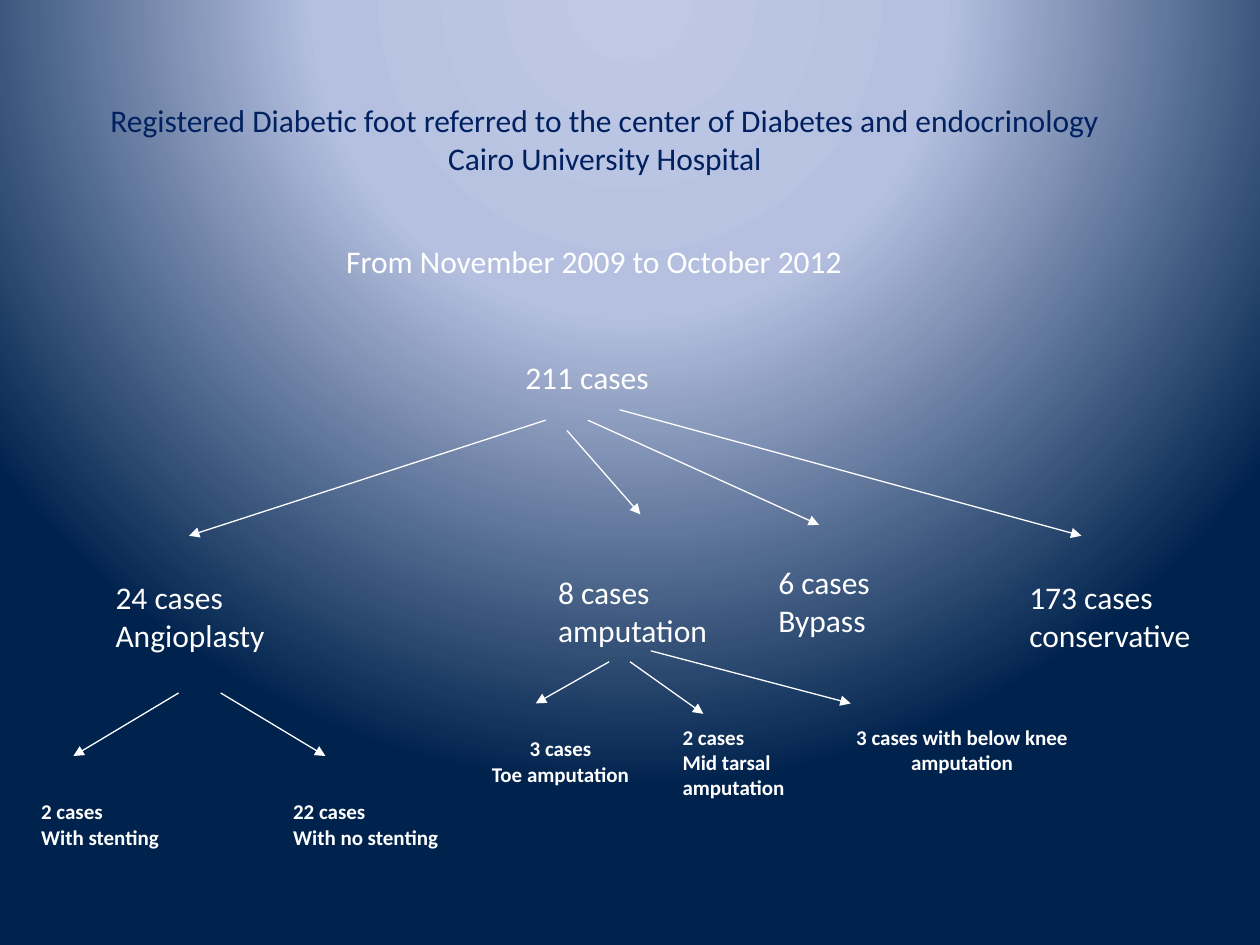
from lxml import etree
from pptx import Presentation
from pptx import util as u
from pptx.dml.color import RGBColor
from pptx.enum import shapes, text
from pptx.oxml import parse_xml
from pptx.oxml.ns import nsdecls, qn

WHITE = RGBColor(0xFF, 0xFF, 0xFF)
NAVY = RGBColor(0x00, 0x20, 0x60)
GLOW = RGBColor(0xBF, 0xC9, 0xE5)
HAZE = RGBColor(0xB5, 0xC0, 0xE0)
DEEP = RGBColor(0x00, 0x23, 0x4D)

LEFT, CENTER = text.PP_ALIGN.LEFT, text.PP_ALIGN.CENTER
BIG, SMALL = 18, 12

# Text, left, top, width (cm)
GROUPS = [
    ("211 cases", 10.34, 7.09, 3.4),
    ("24 cases\nAngioplasty", 2.08, 11.53, 3.78),
    ("8 cases\namputation", 11, 11.43, 3.66),
    ("6 cases\nBypass", 15.44, 11.23, 2.87),
    ("173 cases\nconservative", 20.5, 11.53, 4.06),
]
# Text, left, top, width (cm), alignment
OUTCOMES = [
    ("2 cases\nWith stenting", 0.58, 15.98, 3.2, LEFT),
    ("22 cases\nWith no stenting", 5.66, 15.98, 3.84, LEFT),
    ("3 cases\nToe amputation", 9.47, 14.71, 3.66, CENTER),
    ("2 cases\nMid tarsal\namputation", 13.51, 14.48, 2.79, LEFT),
    ("3 cases with below knee\namputation", 16.69, 14.48, 5.41, CENTER),
]
# Start x, y and end x, y (cm)
ARROWS = [
    (11, 8.47, 3.81, 10.8),
    (11.43, 8.68, 12.91, 10.37),
    (11.85, 8.47, 16.51, 10.58),
    (12.49, 8.26, 21.8, 10.8),
    (3.6, 13.97, 1.48, 15.24),
    (4.45, 13.97, 6.56, 15.24),
    (12.28, 13.34, 10.8, 14.18),
    (12.7, 13.34, 14.18, 14.39),
    (13.12, 13.12, 17.15, 14.18),
]


class Chart:
    """Holds the slide and the style of the case flow chart."""

    font = "Calibri"
    line_color = WHITE
    line_width = u.Pt(0.75)

    def __init__(self, s):
        self.s = s

    def background(self, stops):
        """Fill the slide with a circular gradient centred above its top edge."""
        self.s.background.fill.solid()
        bg = self.s.element.find(".//" + qn("p:bgPr"))
        gs = "".join(
            f'<a:gs pos="{pos * 1000}"><a:srgbClr val="{color}"/></a:gs>'
            for pos, color in stops
        )
        grad = parse_xml(
            f'<a:gradFill {nsdecls("a")} rotWithShape="1"><a:gsLst>{gs}</a:gsLst>'
            '<a:path path="circle">'
            '<a:fillToRect l="50000" t="-80000" r="50000" b="180000"/>'
            "</a:path></a:gradFill>"
        )
        bg.replace(bg.find(qn("a:solidFill")), grad)

    def label(self, words, x, y, w, *, size=BIG, color=WHITE, bold=False, align=LEFT):
        """Add a text box as tall as its lines, one paragraph per line."""
        lines = words.split("\n")
        h = 0.25 + 0.0423 * size * len(lines)
        sp = self.s.shapes.add_textbox(u.Cm(x), u.Cm(y), u.Cm(w), u.Cm(h))
        tf = sp.text_frame
        tf.word_wrap = False
        tf.auto_size = text.MSO_AUTO_SIZE.SHAPE_TO_FIT_TEXT
        for i, line in enumerate(lines):
            p = tf.add_paragraph() if i else tf.paragraphs[0]
            p.alignment = align
            r = p.add_run()
            r.text = line
            r.font.name = self.font
            r.font.size = u.Pt(size)
            r.font.bold = bold
            r.font.color.rgb = color

    def arrow(self, *ends):
        sp = self.s.shapes.add_connector(
            shapes.MSO_CONNECTOR.STRAIGHT, *(u.Cm(v) for v in ends)
        )
        sp.line.color.rgb = self.line_color
        sp.line.width = self.line_width
        spPr = sp.element.spPr
        etree.SubElement(spPr.find(qn("a:ln")), qn("a:tailEnd"), type="triangle")
        etree.SubElement(spPr, qn("a:effectLst"))


def main():
    prs = Presentation()
    prs.slide_width, prs.slide_height = u.Cm(25.4), u.Cm(19.05)
    chart = Chart(prs.slides.add_slide(prs.slide_layouts[6]))

    chart.background([(0, GLOW), (40, HAZE), (100, DEEP)])
    chart.label(
        "Registered Diabetic foot referred to the center of Diabetes and endocrinology\n"
        "Cairo University Hospital",
        1.68, 1.91, 21.03, color=NAVY, align=CENTER,
    )
    chart.label("From November 2009 to October 2012", 6.73, 4.75, 10.62)
    for group in GROUPS:
        chart.label(*group)
    for *outcome, align in OUTCOMES:
        chart.label(*outcome, size=SMALL, bold=True, align=align)
    for ends in ARROWS:
        chart.arrow(*ends)

    prs.save("out.pptx")


if __name__ == "__main__":
    main()
